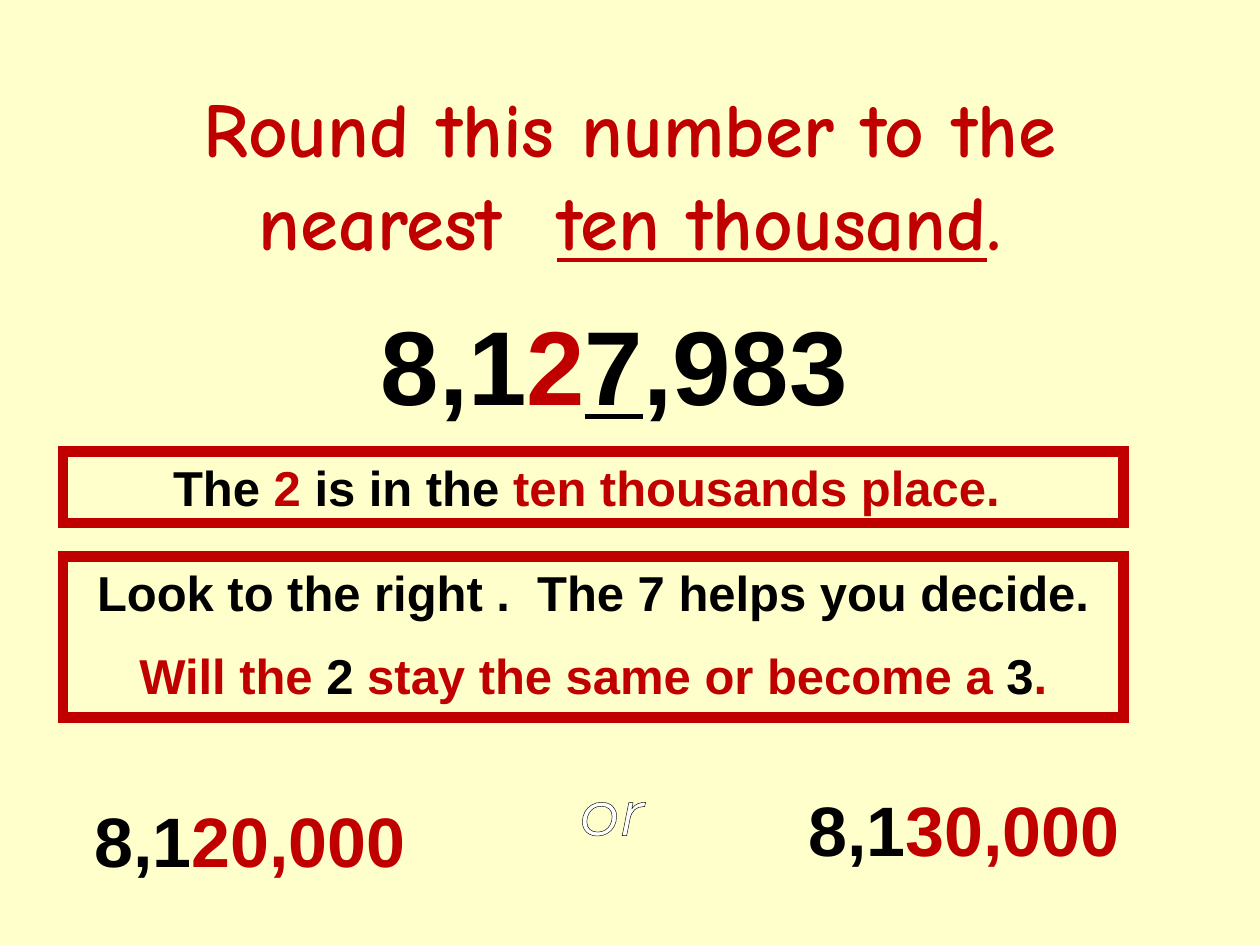
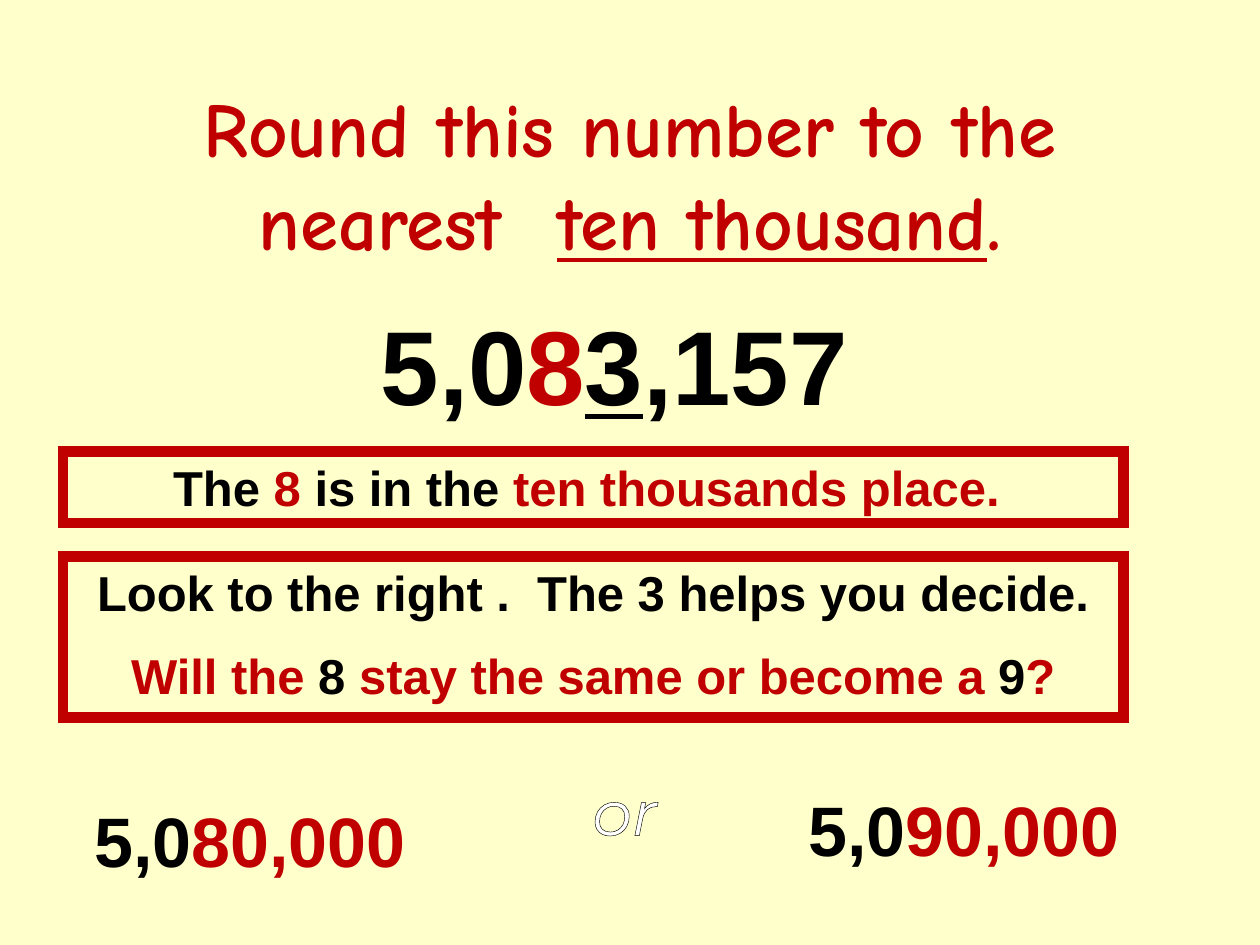
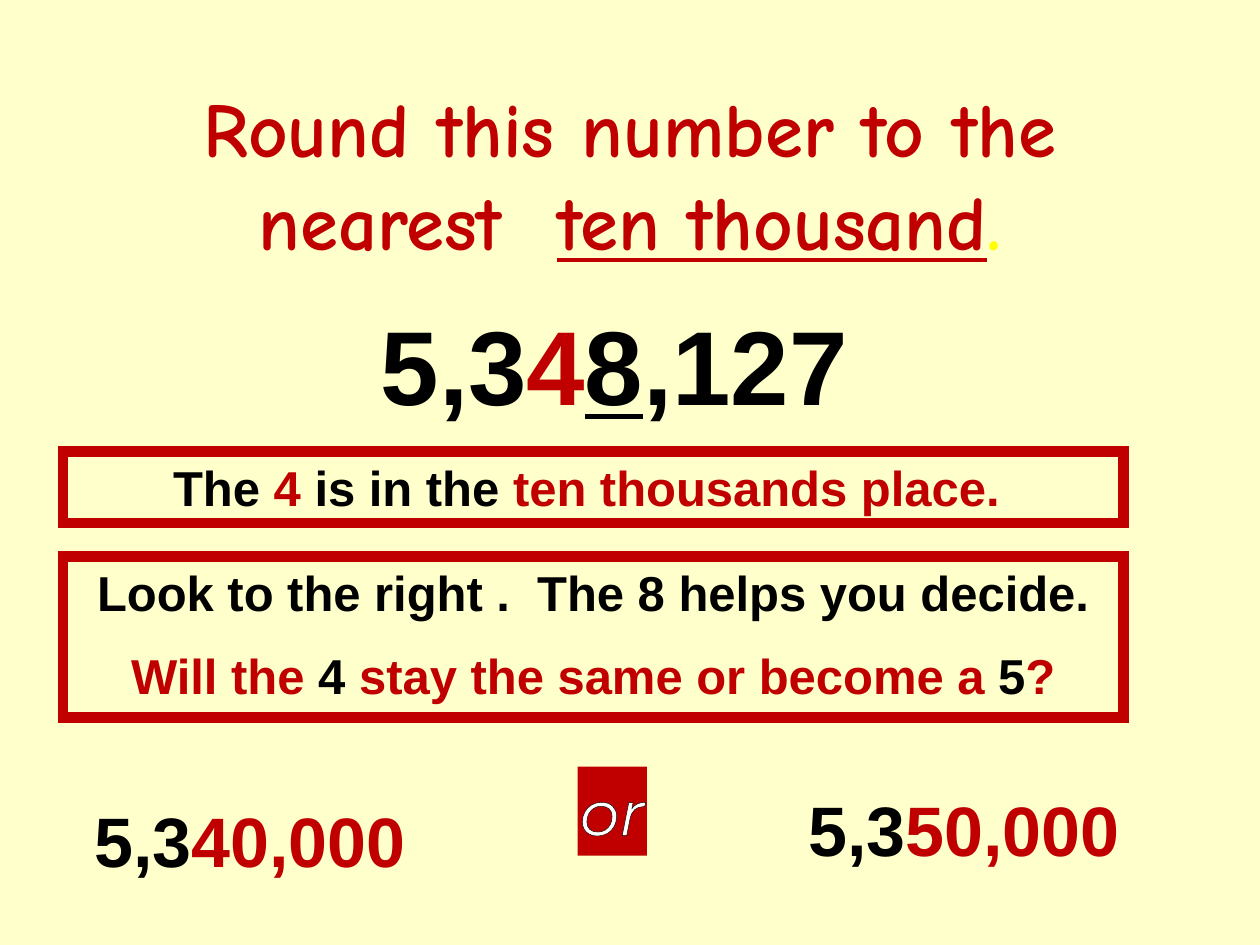
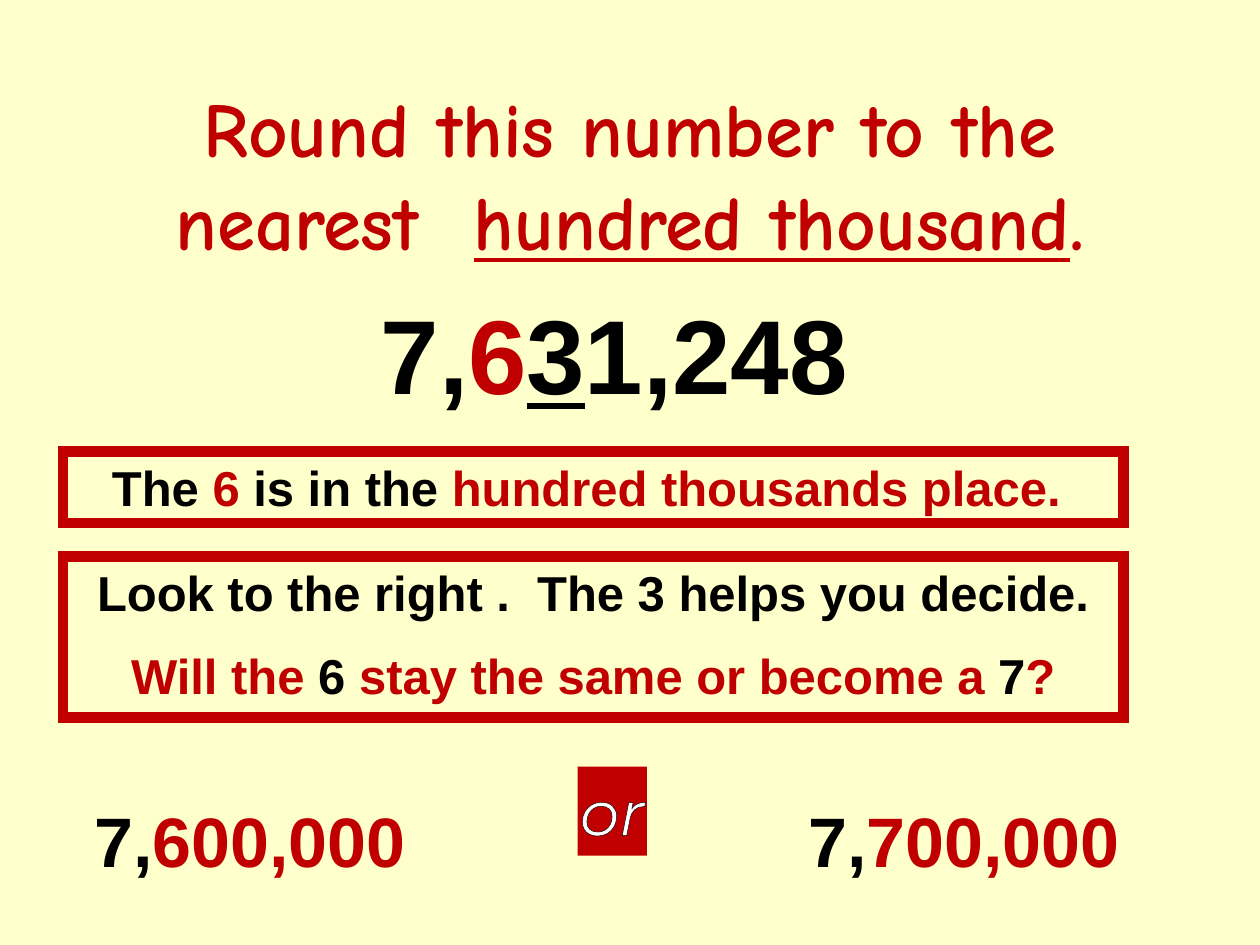
"""Build four slides that practise rounding large numbers."""
import dataclasses
import typing

import lxml.etree
import pptx
import pptx.dml.color
import pptx.enum.shapes
import pptx.enum.text
import pptx.oxml.ns
import pptx.util

Pt = pptx.util.Pt
RGBColor = pptx.dml.color.RGBColor
Align = pptx.enum.text.PP_ALIGN

CREAM = RGBColor(0xFF, 0xFF, 0xCC)
RED = RGBColor(0xC0, 0x00, 0x00)
BLACK = RGBColor(0x00, 0x00, 0x00)
WHITE = RGBColor(0xFF, 0xFF, 0xFF)
YELLOW = RGBColor(0xFF, 0xFF, 0x00)

BODY_FONT = "Arial"
TITLE_FONT = "Comic Neue"
OR_FONT = "Montserrat"


class Frame(typing.NamedTuple):
    """Position and size in points."""

    left: float
    top: float
    width: float
    height: float

    def lengths(self) -> list[pptx.util.Length]:
        """Return the four values as lengths."""
        return [Pt(value) for value in self]


class Piece(typing.NamedTuple):
    """A stretch of text in one colour."""

    text: str
    color: RGBColor = BLACK
    underline: bool = False


@dataclasses.dataclass(frozen=True)
class Problem:
    """A rounding exercise and the details of its slide."""

    number: str
    place: str
    digit_index: int
    number_top: float = 168
    upper_top: float = 426
    upper_width: float = 222
    or_width: float = 39.6
    or_filled: bool = False
    title_stop: RGBColor = RED
    question_end: str = "?"

    @property
    def head(self) -> str:
        """Return what stands before the rounding digit."""
        return self.number[:self.digit_index]

    @property
    def digit(self) -> str:
        """Return the rounding digit."""
        return self.number[self.digit_index]

    @property
    def helper(self) -> str:
        """Return the digit that decides."""
        return self.number[self.digit_index + 1]

    @property
    def next_digit(self) -> str:
        """Return the rounding digit raised by one."""
        return str(int(self.digit) + 1)

    @property
    def zeros(self) -> str:
        """Return the digits after the rounding digit, all made zero."""
        tail = self.number[self.digit_index + 1:]
        return "".join("," if mark == "," else "0" for mark in tail)


PROBLEMS = [
    Problem("8,127,983", "ten thousand", 3, question_end="."),
    Problem("5,083,157", "ten thousand", 3, or_width=54),
    Problem("5,348,127", "ten thousand", 3, or_filled=True, title_stop=YELLOW),
    Problem("7,631,248", "hundred thousand", 2, number_top=162, upper_top=432,
            upper_width=216, or_filled=True),
]

TITLE_FRAME = Frame(36, 54, 648, 90)


def write_paragraph(para, pieces: list[Piece], size: float, font: str = BODY_FONT,
                    align=Align.CENTER, bold: bool = True) -> None:
    """Fill a paragraph with coloured pieces in one font."""
    para.alignment = align
    para.font.name = font
    para.font.size = Pt(size)
    para.font.bold = bold
    for piece in pieces:
        span = para.add_run()
        span.text = piece.text
        span.font.color.rgb = piece.color
        if piece.underline:
            span.font.underline = True


def space_before_half(para) -> None:
    """Put half a line of space before a paragraph."""
    properties = para._p.get_or_add_pPr()
    before = lxml.etree.Element(pptx.oxml.ns.qn("a:spcBef"))
    lxml.etree.SubElement(before, pptx.oxml.ns.qn("a:spcPct"), val="50000")
    properties.insert(0, before)


def outline_text(span, color: RGBColor, width: float) -> None:
    """Draw an outline around the letters of a run."""
    line = lxml.etree.Element(pptx.oxml.ns.qn("a:ln"), w=str(int(Pt(width))))
    fill = lxml.etree.SubElement(line, pptx.oxml.ns.qn("a:solidFill"))
    lxml.etree.SubElement(fill, pptx.oxml.ns.qn("a:srgbClr"), val=str(color))
    span._r.get_or_add_rPr().insert(0, line)


def add_rectangle(page, frame: Frame):
    """Add a plain rectangle with its text at the top."""
    box = page.shapes.add_shape(pptx.enum.shapes.MSO_SHAPE.RECTANGLE, *frame.lengths())
    box.shadow.inherit = False
    box.text_frame.vertical_anchor = pptx.enum.text.MSO_ANCHOR.TOP
    return box


def write_lines(box, lines: list[list[Piece]], size: float, align=Align.CENTER) -> None:
    """Write spaced lines into a box that grows with its text."""
    text = box.text_frame
    text.word_wrap = True
    text.auto_size = pptx.enum.text.MSO_AUTO_SIZE.SHAPE_TO_FIT_TEXT
    for index, pieces in enumerate(lines):
        para = text.add_paragraph() if index else text.paragraphs[0]
        write_paragraph(para, pieces, size, align=align)
        space_before_half(para)


def add_title(page, problem: Problem) -> None:
    """Fill the title placeholder."""
    title = page.shapes.title
    title.left, title.top, title.width, title.height = TITLE_FRAME.lengths()
    title.text_frame.auto_size = pptx.enum.text.MSO_AUTO_SIZE.NONE
    title.text_frame.vertical_anchor = pptx.enum.text.MSO_ANCHOR.MIDDLE
    write_paragraph(title.text_frame.paragraphs[0], [
        Piece("Round this number to the nearest  ", RED),
        Piece(problem.place, RED, underline=True),
        Piece(".", problem.title_stop),
    ], 44, TITLE_FONT)


def add_number(page, problem: Problem) -> None:
    """Add the large number with its marked digits."""
    frame = Frame(120, problem.number_top, 462, 80)
    write_lines(page.shapes.add_textbox(*frame.lengths()), [[
        Piece(problem.head),
        Piece(problem.digit, RED),
        Piece(problem.helper, underline=True),
        Piece(problem.number[problem.digit_index + 2:]),
    ]], 60)


def add_or(page, problem: Problem) -> None:
    """Add the outlined word between the two answers."""
    box = add_rectangle(page, Frame(330, 438, problem.or_width, 51))
    box.line.fill.background()
    if problem.or_filled:
        box.fill.solid()
        box.fill.fore_color.rgb = RED
    else:
        box.fill.background()
    box.text_frame.word_wrap = False
    para = box.text_frame.paragraphs[0]
    write_paragraph(para, [Piece("or", WHITE)], 36, OR_FONT, bold=False)
    para.font.italic = True
    outline_text(para.runs[0], BLACK, 0.75)


def add_answer(page, problem: Problem, digit: str, frame: Frame) -> None:
    """Add one possible rounded number."""
    box = page.shapes.add_textbox(*frame.lengths())
    box.text_frame.margin_left = Pt(23.9)
    box.text_frame.margin_top = Pt(23.6)
    pieces = [Piece(problem.head), Piece(digit + problem.zeros, RED)]
    write_lines(box, [pieces], 40, Align.LEFT)


def add_hint(page, frame: Frame, lines: list[list[Piece]]) -> None:
    """Add a box of hints with a sharp-cornered red border."""
    box = add_rectangle(page, frame)
    box.fill.background()
    box.line.color.rgb = RED
    box.line.width = Pt(6)
    border = box.line._get_or_add_ln()
    lxml.etree.SubElement(border, pptx.oxml.ns.qn("a:miter"), lim="800000")
    write_lines(box, lines, 28)


def add_problem(deck, problem: Problem) -> None:
    """Add the slide for one problem."""
    page = deck.slides.add_slide(deck.slide_layouts.get_by_name("Title Only"))
    add_title(page, problem)
    add_number(page, problem)
    add_or(page, problem)
    add_answer(page, problem, problem.digit, Frame(30, 432, 216, 80))
    add_answer(page, problem, problem.next_digit,
               Frame(438, problem.upper_top, problem.upper_width, 80))
    add_hint(page, Frame(36, 258, 606, 41), [[
        Piece("The "),
        Piece(problem.digit, RED),
        Piece(" is in the "),
        Piece(f"{problem.place}s place. ", RED),
    ]])
    add_hint(page, Frame(36, 318, 606, 92), [
        [Piece(f"Look to the right .  The {problem.helper} helps you decide.")],
        [
            Piece("Will the ", RED),
            Piece(f"{problem.digit} "),
            Piece("stay the same or become a ", RED),
            Piece(problem.next_digit),
            Piece(problem.question_end, RED),
        ],
    ])


def main() -> None:
    """Build and save the deck."""
    deck = pptx.Presentation()
    deck.slide_width, deck.slide_height = Pt(720), Pt(540)
    background = deck.slide_master.background.fill
    background.solid()
    background.fore_color.rgb = CREAM
    for problem in PROBLEMS:
        add_problem(deck, problem)
    deck.save("out.pptx")


if __name__ == "__main__":
    main()
